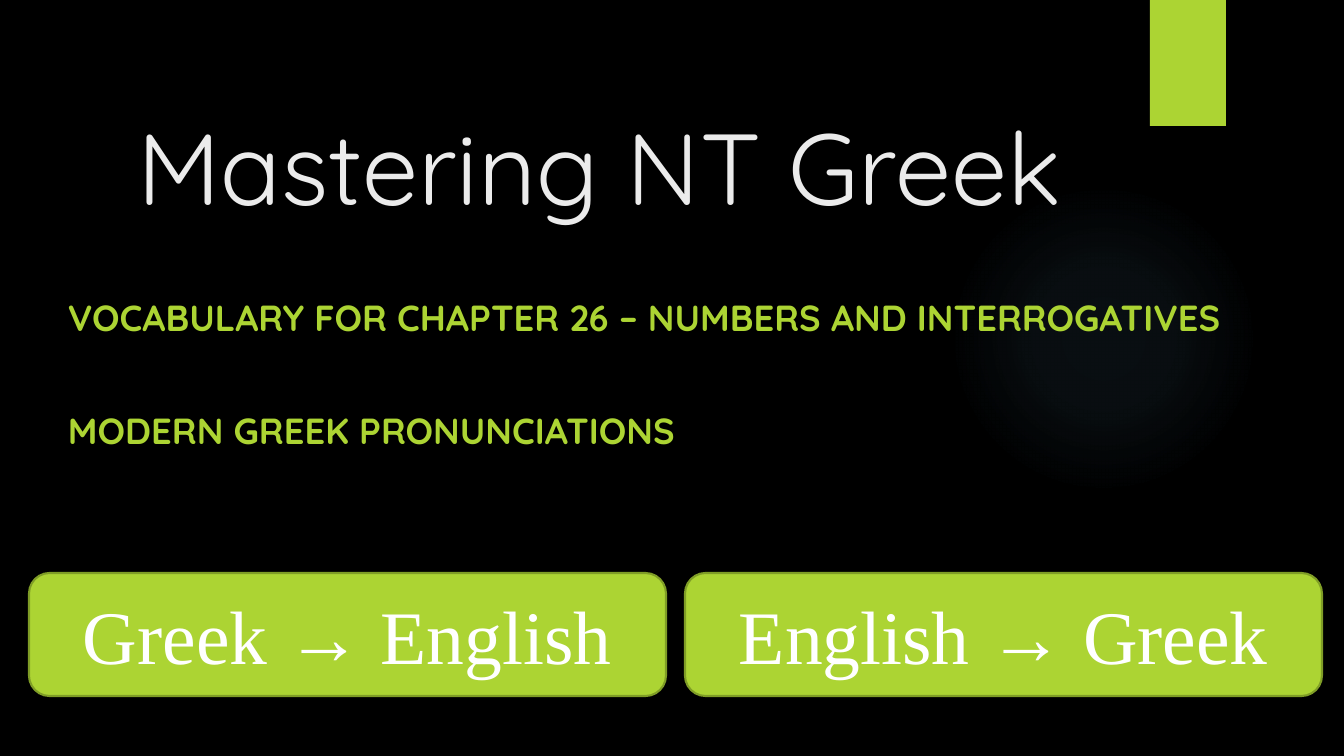
import pptx
import pptx.util
import pptx.oxml
import pptx.oxml.ns
import pptx.dml.color
import pptx.enum.shapes
import pptx.enum.text
import lxml.etree

SHAPE = pptx.enum.shapes.MSO_SHAPE
ALIGN = pptx.enum.text.PP_ALIGN
ANCHOR = pptx.enum.text.MSO_ANCHOR
NAMESPACE = pptx.oxml.ns.nsdecls("a")
SLIDE_WIDTH, SLIDE_HEIGHT = 1344, 756
SCALE = 12192000 / SLIDE_WIDTH
LIME = "ACD433"


def px(length):
    return pptx.util.Emu(round(length * SCALE))


def colour(value):
    return pptx.dml.color.RGBColor.from_string(value)


def add_panel(page, kind, box, fill):
    panel = page.shapes.add_shape(kind, *map(px, box))
    panel.shadow.inherit = False
    panel.fill.solid()
    panel.fill.fore_color.rgb = colour(fill)
    panel.line.fill.background()
    return panel


def write(para, text, shade, **formats):
    span = para.add_run()
    span.text = text
    span.font.color.rgb = colour(shade)
    for name, value in formats.items():
        setattr(span.font, name, value)


def set_frame(frame, anchor):
    settings = {
        "word_wrap": True,
        "auto_size": pptx.enum.text.MSO_AUTO_SIZE.NONE,
        "vertical_anchor": anchor,
    }
    for name, value in settings.items():
        setattr(frame, name, value)


def add_glow(page, box):
    glow = add_panel(page, SHAPE.OVAL, box, "7AC4F0")
    stops = "".join(
        f'<a:gs pos="{position * 1000}"><a:srgbClr val="7AC4F0">'
        f'<a:alpha val="{alpha * 1000}"/></a:srgbClr></a:gs>'
        for position, alpha in ((0, 7), (36, 6), (69, 0), (100, 0))
    )
    gradient = pptx.oxml.parse_xml(
        f'<a:gradFill {NAMESPACE} rotWithShape="1"><a:gsLst>{stops}</a:gsLst>'
        '<a:path path="circle"><a:fillToRect l="50000" t="50000" r="50000" b="50000"/>'
        "</a:path></a:gradFill>"
    )
    solid = glow.element.spPr.find(pptx.oxml.ns.qn("a:solidFill"))
    glow.element.spPr.replace(solid, gradient)


def add_ribbon(page, box):
    ribbon = add_panel(page, SHAPE.RECTANGLE, box, LIME)
    effects = ribbon.element.spPr.find(pptx.oxml.ns.qn("a:effectLst"))
    effects.append(pptx.oxml.parse_xml(
        f'<a:outerShdw {NAMESPACE} blurRad="38100" dist="25400" dir="5400000">'
        '<a:srgbClr val="000000"><a:alpha val="45000"/></a:srgbClr></a:outerShdw>'
    ))


def place_title(page, box, text):
    title = page.shapes.title
    page.shapes.element.append(title.element)
    for name, value in zip(("left", "top", "width", "height"), box):
        setattr(title, name, px(value))
    set_frame(title.text_frame, ANCHOR.BOTTOM)
    para = title.text_frame.paragraphs[0]
    para.alignment = ALIGN.LEFT
    write(para, text, "EBEBEB", name="Quicksand", size=pptx.util.Pt(72))


def add_subtitle(page, box, lines):
    frame = page.shapes.add_textbox(*map(px, box)).text_frame
    set_frame(frame, ANCHOR.TOP)
    for index, line in enumerate(lines):
        para = frame.add_paragraph() if index else frame.paragraphs[0]
        if index:
            para.space_before = pptx.util.Pt(50)
        write(para, line, LIME, name="Quicksand", size=pptx.util.Pt(25.9), bold=True)


def add_buttons(page, box, labels, gap):
    left, top, width, height = box
    button_width = (width - gap * (len(labels) - 1)) / len(labels)
    for index, label in enumerate(labels):
        place = (left + index * (button_width + gap), top, button_width, height)
        button = add_panel(page, SHAPE.ROUNDED_RECTANGLE, place, LIME)
        button.line.color.rgb = colour("7F9D26")
        button.line.width = pptx.util.Pt(1.5)
        set_frame(button.text_frame, ANCHOR.MIDDLE)
        para = button.text_frame.paragraphs[0]
        para.alignment = ALIGN.CENTER
        write(para, label, "FFFFFF", name="Times New Roman", size=pptx.util.Pt(54))


def build_cover(deck):
    page = deck.slides.add_slide(deck.slide_layouts[5])
    page.background.fill.solid()
    page.background.fill.fore_color.rgb = colour("000000")
    add_glow(page, (949, 184, 310, 310))
    add_ribbon(page, (1150, 0, 76, 126))
    place_title(page, (127, 71, 1012, 160), "Mastering NT Greek")
    add_subtitle(page, (58, 290, 1209, 271), (
        "VOCABULARY FOR CHAPTER 26 – NUMBERS AND INTERROGATIVES",
        "MODERN GREEK PRONUNCIATIONS",
    ))
    add_buttons(page, (29, 573, 1293, 123), ("Greek → English", "English → Greek"), 19)


def main():
    deck = pptx.Presentation()
    deck.slide_width = px(SLIDE_WIDTH)
    deck.slide_height = px(SLIDE_HEIGHT)
    build_cover(deck)
    deck.save("out.pptx")


if __name__ == "__main__":
    main()
